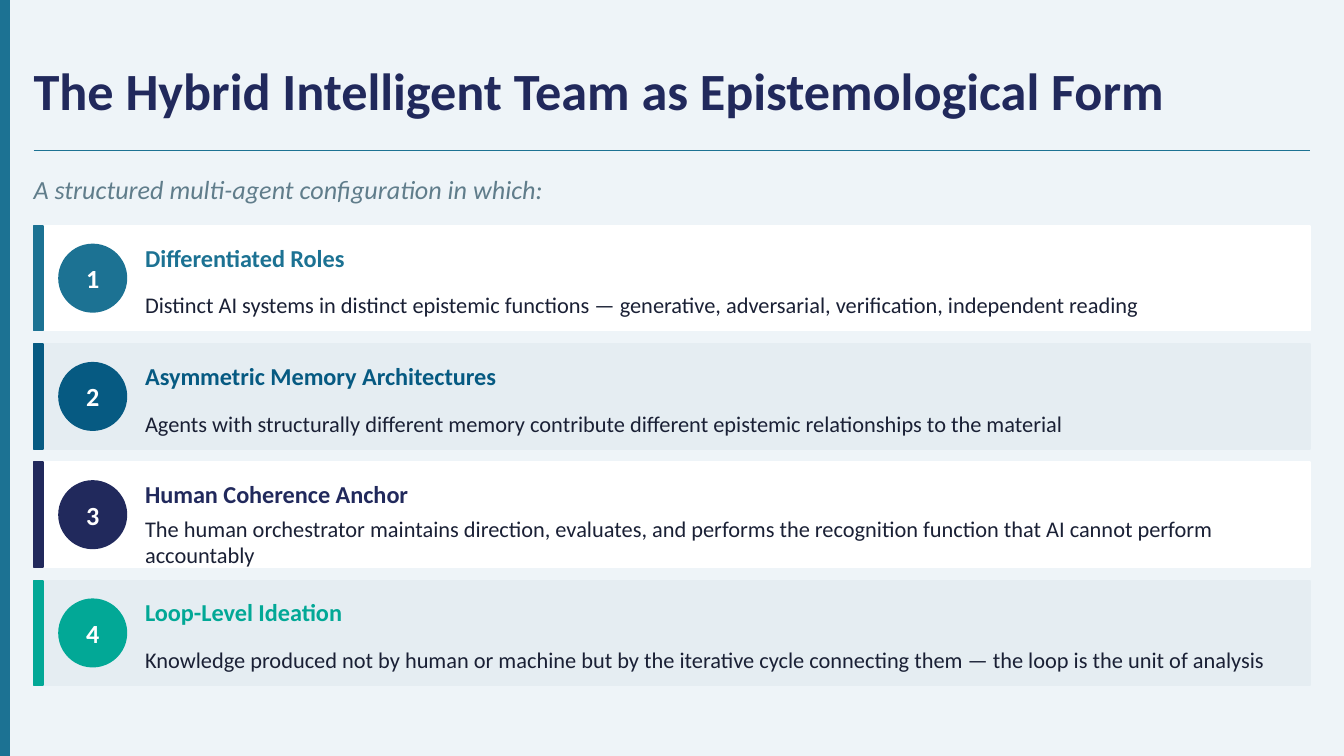
import dataclasses
import typing

import lxml.etree
import pptx
import pptx.dml.color
import pptx.enum.shapes
import pptx.enum.text
import pptx.oxml.ns
import pptx.util

Inches = pptx.util.Inches
Shape = pptx.enum.shapes.MSO_SHAPE
Align = pptx.enum.text.PP_ALIGN

FONT = "Calibri"
TEAL, NAVY, WHITE, MIST = "1C7293", "21295C", "FFFFFF", "E5EDF2"
WIDE = 10
TALL = WIDE * 9 / 16
LEFT, WIDTH, BAR = 0.25, 9.5, 0.07
TOP, STEP, HIGH = 1.68, 0.88, 0.78


@dataclasses.dataclass
class Box:
    left: float
    top: float
    width: float
    height: float

    def lengths(self) -> list[int]:
        return [Inches(n) for n in (self.left, self.top, self.width, self.height)]


@dataclasses.dataclass
class Style:
    size: int
    color: str
    bold: bool = False
    italic: bool = False
    align: typing.Any = Align.LEFT


@dataclasses.dataclass
class Card:
    head: str
    body: str
    color: str


CARDS = [
    Card("Differentiated Roles",
         "Distinct AI systems in distinct epistemic functions — generative, "
         "adversarial, verification, independent reading", TEAL),
    Card("Asymmetric Memory Architectures",
         "Agents with structurally different memory contribute different "
         "epistemic relationships to the material", "065A82"),
    Card("Human Coherence Anchor",
         "The human orchestrator maintains direction, evaluates, and performs "
         "the recognition function that AI cannot perform accountably", NAVY),
    Card("Loop-Level Ideation",
         "Knowledge produced not by human or machine but by the iterative cycle "
         "connecting them — the loop is the unit of analysis", "02A896"),
]


def paint(code: str) -> pptx.dml.color.RGBColor:
    return pptx.dml.color.RGBColor.from_string(code)


def write(shape: typing.Any, text: str, style: Style) -> None:
    frame = shape.text_frame
    frame.auto_size = pptx.enum.text.MSO_AUTO_SIZE.NONE
    frame.word_wrap = True
    frame.vertical_anchor = pptx.enum.text.MSO_ANCHOR.MIDDLE
    frame.margin_left = frame.margin_right = 0
    frame.margin_top = frame.margin_bottom = 0
    frame.text = text
    line = frame.paragraphs[0]
    line.alignment = style.align
    line.font.name = FONT
    line.font.size = pptx.util.Pt(style.size)
    line.font.bold = style.bold
    line.font.italic = style.italic
    line.font.color.rgb = paint(style.color)


def label(slide: typing.Any, box: Box, text: str, style: Style) -> None:
    write(slide.shapes.add_textbox(*box.lengths()), text, style)


def block(slide: typing.Any, kind: typing.Any, box: Box, color: str) -> None:
    shape = slide.shapes.add_shape(kind, *box.lengths())
    shape.shadow.inherit = False
    shape.fill.solid()
    shape.fill.fore_color.rgb = paint(color)
    shape.line.color.rgb = paint(color)
    shape.line.width = pptx.util.Pt(1)


def rule(slide: typing.Any, top: float) -> None:
    line = slide.shapes.add_connector(
        pptx.enum.shapes.MSO_CONNECTOR.STRAIGHT,
        Inches(LEFT), Inches(top), Inches(LEFT + WIDTH), Inches(top))
    line.line.color.rgb = paint(TEAL)
    line.line.width = pptx.util.Pt(0.75)
    props = line.element.find(pptx.oxml.ns.qn("p:spPr"))
    lxml.etree.SubElement(props, pptx.oxml.ns.qn("a:effectLst"))


def draw(slide: typing.Any, rank: int, card: Card) -> None:
    top = TOP + rank * STEP
    back = MIST if rank % 2 else WHITE
    disc = Box(0.44, top + 0.14, 0.5, 0.5)
    block(slide, Shape.RECTANGLE, Box(LEFT, top, WIDTH, HIGH), back)
    block(slide, Shape.RECTANGLE, Box(LEFT, top, BAR, HIGH), card.color)
    block(slide, Shape.OVAL, disc, card.color)
    label(slide, disc, str(rank + 1),
          Style(14, WHITE, bold=True, align=Align.CENTER))
    label(slide, Box(1.08, top + 0.06, 2.7, 0.35), card.head,
          Style(13, card.color, bold=True))
    label(slide, Box(1.08, top + 0.44, 8.5, 0.3), card.body, Style(12, "1A2035"))


def main() -> None:
    deck = pptx.Presentation()
    deck.slide_width, deck.slide_height = Inches(WIDE), Inches(TALL)
    slide = deck.slides.add_slide(deck.slide_layouts[5])
    slide.background.fill.solid()
    slide.background.fill.fore_color.rgb = paint("EEF4F8")

    title = slide.shapes.title
    title.left, title.top, title.width, title.height = Box(
        LEFT, 0.28, WIDTH, 0.78).lengths()
    write(title, "The Hybrid Intelligent Team as Epistemological Form",
          Style(28, NAVY, bold=True))

    block(slide, Shape.RECTANGLE, Box(0, 0, BAR, TALL), TEAL)
    rule(slide, 1.12)
    label(slide, Box(LEFT, 1.22, WIDTH, 0.38),
          "A structured multi-agent configuration in which:",
          Style(14, "607D8B", italic=True))
    for rank, card in enumerate(CARDS):
        draw(slide, rank, card)
    deck.save("out.pptx")


if __name__ == "__main__":
    main()
